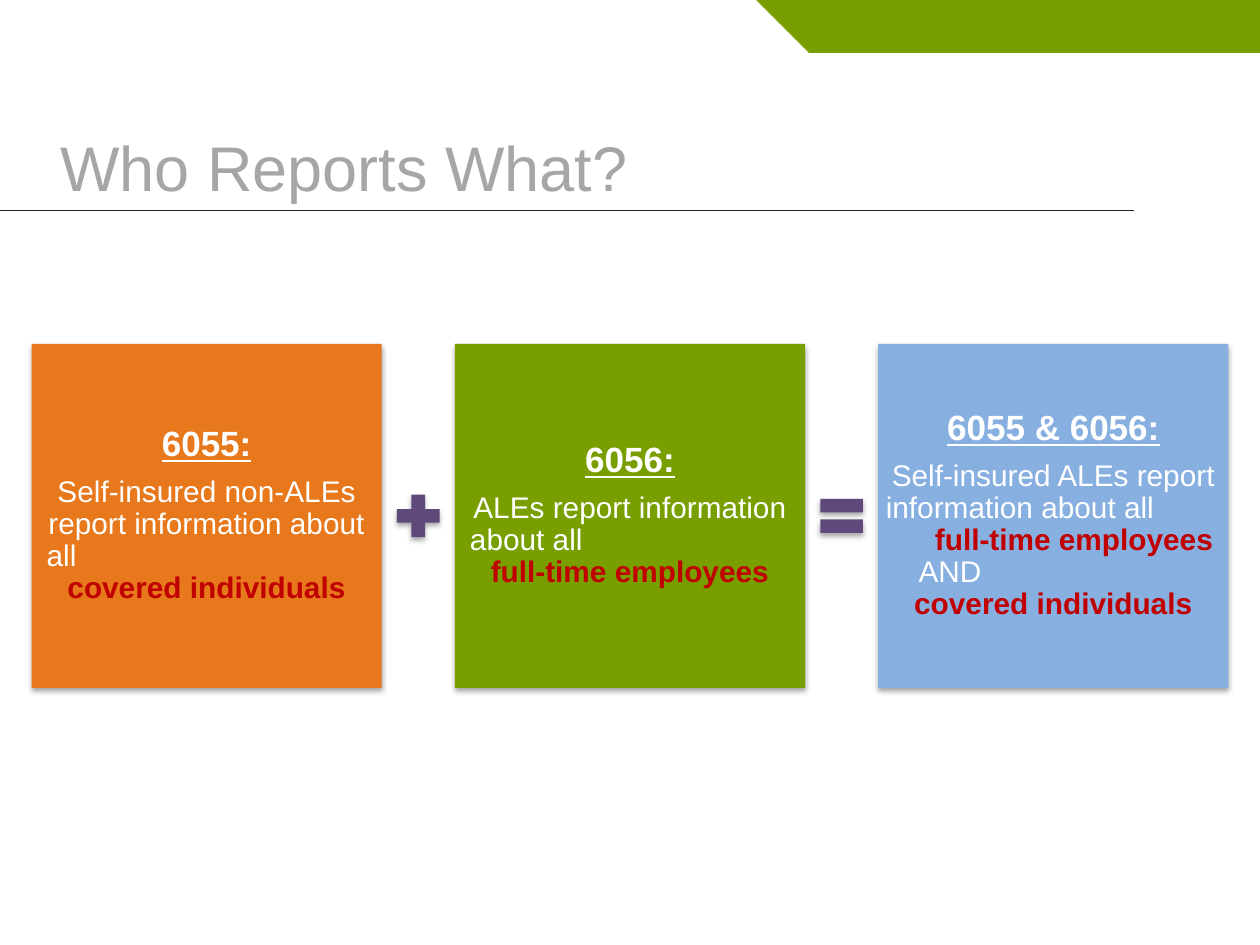
from pptx import Presentation
from pptx import util as u
from pptx.dml.color import RGBColor
from pptx.enum import shapes, text
from pptx.oxml import parse_xml
from pptx.oxml.ns import nsdecls

WHITE = RGBColor(0xFF, 0xFF, 0xFF)
RED = RGBColor(0xC0, 0x00, 0x00)
GREEN = RGBColor(0x78, 0x9E, 0x00)
ORANGE = RGBColor(0xE8, 0x78, 0x1C)
BLUE = RGBColor(0x87, 0xB0, 0xE1)
PURPLE = RGBColor(0x5F, 0x49, 0x7A)
GRAY = RGBColor(0xA6, 0xA6, 0xA6)
DARK = RGBColor(0x21, 0x22, 0x1E)
FONT = "Arial"
KIND = shapes.MSO_SHAPE

# Content: each line is (text, highlighted, left indent or None for centred)
TITLE = "Who Reports What?"
CARDS = [
    (ORANGE, "6055:", [
        ("Self-insured non-ALEs report information about", False, None),
        ("all", False, 0.09),
        ("covered individuals", True, None)]),
    (GREEN, "6056:", [
        ("ALEs report information", False, None),
        ("about all", False, 0.09),
        ("full-time employees", True, None)]),
    (BLUE, "6055 & 6056:", [
        ("Self-insured ALEs report", False, None),
        ("information about all", False, 0.03),
        ("full-time employees", True, 0.42),
        ("AND", False, 0.29),
        ("covered individuals", True, None)]),
]
OPERATORS = [KIND.MATH_PLUS, KIND.MATH_EQUAL]

# Grid, in inches
WIDTH, HEIGHT = 10, 7.5
MARGIN, TOP, CARD, SIGN = 0.25, 2.73, 2.78, 0.46
GAP = (WIDTH - 2 * MARGIN - len(CARDS) * CARD) / (len(CARDS) - 1)
BAND, RULE_Y = 0.42, 1.67


def add_block(s, kind, x, y, w, h, color, shadow=False):
    sp = s.shapes.add_shape(kind, *map(u.Inches, (x, y, w, h)))
    sp.fill.solid()
    sp.fill.fore_color.rgb = color
    sp.line.fill.background()
    sp.shadow.inherit = False
    if shadow:
        effects = sp._element.spPr.find(
            "{http://schemas.openxmlformats.org/drawingml/2006/main}effectLst")
        effects.append(parse_xml(
            f'<a:outerShdw {nsdecls("a")} blurRad="{u.Pt(3.1)}" dist="{u.Pt(1.8)}" '
            'dir="5400000" rotWithShape="0"><a:srgbClr val="000000">'
            '<a:alpha val="35000"/></a:srgbClr></a:outerShdw>'))
    return sp


def add_run(p, words, size, color, bold=False, underline=False):
    r = p.add_run()
    r.text = words
    f = r.font
    f.name, f.size, f.bold, f.underline = FONT, u.Pt(size), bold, underline
    f.color.rgb = color


def fill_card(sp, heading, lines):
    tf = sp.text_frame
    tf.word_wrap = True
    tf.vertical_anchor = text.MSO_ANCHOR.MIDDLE
    tf.margin_left = tf.margin_right = u.Inches(0.03)
    tf.margin_top = tf.margin_bottom = u.Inches(0.03)
    p = tf.paragraphs[0]
    p.alignment = text.PP_ALIGN.CENTER
    p.line_spacing = 0.9
    p.space_after = u.Pt(7)
    add_run(p, heading, 20, WHITE, bold=True, underline=True)
    for words, highlighted, indent in lines:
        p = tf.add_paragraph()
        p.line_spacing = 0.9
        if indent is None:
            p.alignment = text.PP_ALIGN.CENTER
        else:
            p.alignment = text.PP_ALIGN.LEFT
            p._p.get_or_add_pPr().set("marL", str(u.Inches(indent)))
        add_run(p, words, 17, RED if highlighted else WHITE, bold=highlighted)


prs = Presentation()
prs.slide_width, prs.slide_height = u.Inches(WIDTH), u.Inches(HEIGHT)
s = prs.slides.add_slide(prs.slide_layouts[5])

# Rule and corner band
rule = s.shapes.add_connector(shapes.MSO_CONNECTOR.STRAIGHT, 0, u.Inches(RULE_Y),
                              u.Inches(0.9 * WIDTH), u.Inches(RULE_Y))
rule.line.color.rgb = DARK
rule.line.width = u.Pt(0.25)
rule._element.spPr.append(parse_xml(f'<a:effectLst {nsdecls("a")}/>'))
band_x = 0.6 * WIDTH + BAND
add_block(s, KIND.RECTANGLE, band_x, 0, WIDTH - band_x, BAND, GREEN)
corner = add_block(s, KIND.RIGHT_TRIANGLE, band_x - BAND, 0, BAND, BAND, GREEN)
corner.rotation = 180

# Title
title = s.shapes.title
title.left, title.top = 0, u.Inches(BAND)
title.width, title.height = u.Inches(0.95 * WIDTH), u.Inches(RULE_Y - BAND)
tf = title.text_frame
tf.auto_size = text.MSO_AUTO_SIZE.NONE
tf.vertical_anchor = text.MSO_ANCHOR.BOTTOM
p = tf.paragraphs[0]
p.alignment = text.PP_ALIGN.LEFT
p._p.get_or_add_pPr().set("marL", str(u.Inches(0.38)))
add_run(p, TITLE, 36, GRAY)

# Cards, with an operator centred in each gap
for i, (color, heading, lines) in enumerate(CARDS):
    x = MARGIN + i * (CARD + GAP)
    card = add_block(s, KIND.RECTANGLE, x, TOP, CARD, CARD - 0.05, color, shadow=True)
    fill_card(card, heading, lines)
    if i < len(OPERATORS):
        add_block(s, OPERATORS[i], x + CARD + (GAP - SIGN) / 2,
                  TOP + (CARD - 0.05 - SIGN) / 2, SIGN, SIGN, PURPLE, shadow=True)

prs.save("out.pptx")
